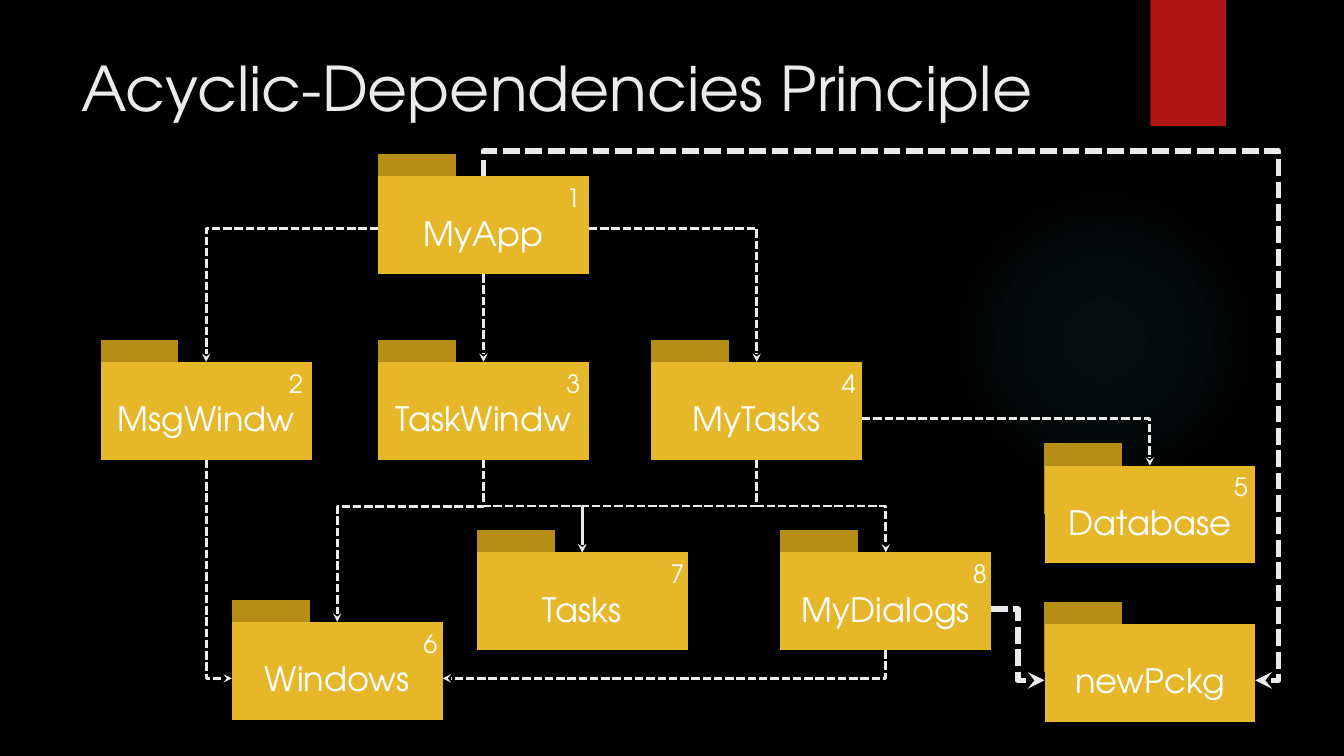
from dataclasses import dataclass

from pptx import Presentation
from pptx.dml.color import RGBColor
from pptx.enum.dml import MSO_LINE
from pptx.enum.shapes import MSO_CONNECTOR, MSO_SHAPE
from pptx.enum.text import MSO_ANCHOR, PP_ALIGN
from pptx.oxml import parse_xml
from pptx.oxml.ns import nsdecls, qn
from pptx.util import Inches, Pt
from lxml.etree import SubElement

FONT = "TeX Gyre Adventor"
WHITE, PALE, GOLD, DARK_GOLD, RED = "FFFFFF", "EBEBEB", "E6B729", "B68E15", "B01513"
BODY_WIDTH, BODY_HEIGHT = 2.09, 0.97
TAB_WIDTH, TAB_HEIGHT, TAB_RISE = 0.77, 0.7, 0.22
LABEL_DROP = 0.31
SITES = {"top": 0, "left": 1, "bottom": 2, "right": 3}


@dataclass
class Package:
    name: str
    left: float
    top: float
    number: str = ""
    number_offset: float = 1.77
    label_height: float = 0.5

    def port(self, side):
        """Point where a dependency meets the given side."""
        middle = self.left + BODY_WIDTH / 2
        label_middle = self.top + LABEL_DROP + self.label_height / 2
        return {
            "top": (middle, self.top),
            "bottom": (middle, self.top + BODY_HEIGHT),
            "left": (self.left, label_middle),
            "right": (self.left + BODY_WIDTH, label_middle),
        }[side]


PACKAGES = [
    Package("MyApp", 3.75, 1.75, "1", label_height=0.41),
    Package("MsgWindw", 1, 3.59, "2"),
    Package("TaskWindw", 3.75, 3.59, "3"),
    Package("MyTasks", 6.46, 3.59, "4", 1.79),
    Package("Database", 10.36, 4.62, "5", 1.78),
    Package("Windows", 2.3, 6.17, "6", 1.8),
    Package("Tasks", 4.73, 5.48, "7", 1.82),
    Package("MyDialogs", 7.74, 5.48, "8", 1.81),
    Package("newPckg", 10.36, 6.19),
]

# source, side, target, side, bend positions, line width
DEPENDENCIES = [
    ("MyApp", "right", "MyTasks", "top", [], 2),
    ("MyApp", "left", "MsgWindw", "top", [], 2),
    ("MyTasks", "right", "Database", "top", [], 2),
    ("MyTasks", "bottom", "MyDialogs", "top", [0.5], 2),
    ("MyTasks", "bottom", "Tasks", "top", [0.5], 2),
    ("TaskWindw", "bottom", "Tasks", "top", [0.5], 2),
    ("TaskWindw", "bottom", "Windows", "top", [0.29], 2),
    ("MsgWindw", "bottom", "Windows", "left", [], 2),
    ("MyDialogs", "bottom", "Windows", "right", [], 2),
    ("MyDialogs", "right", "newPckg", "left", [0.5], 4),
    ("MyApp", "top", "newPckg", "right", [-0.05, 1.03], 4),
]


def color(value):
    return RGBColor.from_string(value)


def inches(*values):
    return [Inches(value) for value in values]


def apply(target, values):
    for name, value in values.items():
        setattr(target, name, value)


def add_block(shapes, kind, box, fill):
    shape = shapes.add_shape(kind, *inches(*box))
    shape.shadow.inherit = False
    shape.line.fill.background()
    shape.fill.solid()
    shape.fill.fore_color.rgb = color(fill)
    return shape


def add_text(shapes, box, text, size, tint=WHITE, alignment=PP_ALIGN.LEFT, **frame_values):
    frame = shapes.add_textbox(*inches(*box)).text_frame
    apply(frame, {"word_wrap": True, "vertical_anchor": MSO_ANCHOR.TOP, **frame_values})
    paragraph = frame.paragraphs[0]
    paragraph.alignment = alignment
    run = paragraph.add_run()
    run.text = text
    apply(run.font, {"name": FONT, "size": Pt(size)})
    run.font.color.rgb = color(tint)


def add_backdrop(slide):
    """Black ground, faint round glow and red marker."""
    slide.background.fill.solid()
    slide.background.fill.fore_color.rgb = color("000000")
    glow = add_block(slide.shapes, MSO_SHAPE.OVAL, (9.41, 1.83, 3.08, 3.08), "50B9C1")
    stops = "".join(
        f'<a:gs pos="{position * 1000}"><a:srgbClr val="50B9C1">'
        f'<a:alpha val="{alpha * 1000}"/></a:srgbClr></a:gs>'
        for position, alpha in [(0, 7), (36, 6), (69, 0)]
    )
    gradient = parse_xml(
        f'<a:gradFill {nsdecls("a")}><a:gsLst>{stops}</a:gsLst><a:path path="circle">'
        '<a:fillToRect l="50000" t="50000" r="50000" b="50000"/></a:path></a:gradFill>'
    )
    properties = glow._element.spPr
    properties.replace(properties.find(qn("a:solidFill")), gradient)
    add_block(slide.shapes, MSO_SHAPE.RECTANGLE, (11.41, 0, 0.75, 1.25), RED)


def add_package(slide, package):
    """Draw a folder and return its body."""
    left, top = package.left, package.top
    shapes = slide.shapes.add_group_shape().shapes
    process = MSO_SHAPE.FLOWCHART_PROCESS
    add_block(shapes, process, (left, top - TAB_RISE, TAB_WIDTH, TAB_HEIGHT), DARK_GOLD)
    body = add_block(shapes, process, (left, top, BODY_WIDTH, BODY_HEIGHT), GOLD)
    label_box = (left, top + LABEL_DROP, BODY_WIDTH, package.label_height)
    add_text(shapes, label_box, package.name, 24, alignment=PP_ALIGN.CENTER)
    if package.number:
        number_box = (left + package.number_offset, top + 0.01, 0.2, 0.4)
        add_text(slide.shapes, number_box, package.number, 18, margin_right=0)
    return body


def style_arrow(connector, width):
    apply(connector.line, {"width": Pt(width), "dash_style": MSO_LINE.SQUARE_DOT})
    connector.line.color.rgb = color(PALE)
    properties = connector._element.spPr
    SubElement(properties.find(qn("a:ln")), qn("a:tailEnd"), type="stealth")
    SubElement(properties, qn("a:effectLst"))


def add_elbow(slide, start, end, vertical, bends, width):
    """Bent arrow; one that leaves vertically is turned 90 degrees about its middle."""
    (x1, y1), (x2, y2) = start, end
    if vertical:
        middle_x, middle_y = (x1 + x2) / 2, (y1 + y2) / 2
        half_x, half_y = (y2 - y1) / 2, (x1 - x2) / 2
        x1, x2 = middle_x - half_x, middle_x + half_x
        y1, y2 = middle_y - half_y, middle_y + half_y
    connector = slide.shapes.add_connector(MSO_CONNECTOR.ELBOW, *inches(x1, y1, x2, y2))
    properties = connector._element.spPr
    if vertical:
        properties.find(qn("a:xfrm")).set("rot", str(90 * 60000))
    geometry = properties.find(qn("a:prstGeom"))
    geometry.set("prst", f"bentConnector{len(bends) + 2}")
    guides = geometry.find(qn("a:avLst"))
    for index, bend in enumerate(bends, 1):
        SubElement(guides, qn("a:gd"), name=f"adj{index}", fmla=f"val {round(bend * 100000)}")
    style_arrow(connector, width)


def add_straight(slide, source, target):
    connector = slide.shapes.add_connector(MSO_CONNECTOR.STRAIGHT, 0, 0, 0, 0)
    connector.begin_connect(source, SITES["bottom"])
    connector.end_connect(target, SITES["top"])
    style_arrow(connector, 2)


def add_diagram(slide):
    packages = {package.name: package for package in PACKAGES}
    bodies = {name: add_package(slide, package) for name, package in packages.items()}
    add_straight(slide, bodies["MyApp"], bodies["TaskWindw"])
    for source, source_side, target, target_side, bends, width in DEPENDENCIES:
        start = packages[source].port(source_side)
        end = packages[target].port(target_side)
        add_elbow(slide, start, end, source_side in ("top", "bottom"), bends, width)


def main():
    presentation = Presentation()
    apply(presentation, {"slide_width": Inches(13.33), "slide_height": Inches(7.5)})
    slide = presentation.slides.add_slide(presentation.slide_layouts[6])
    add_backdrop(slide)
    add_text(slide.shapes, (0.71, 0.45, 10.29, 1.53), "Acyclic-Dependencies Principle", 44, PALE)
    add_diagram(slide)
    presentation.save("out.pptx")


if __name__ == "__main__":
    main()
